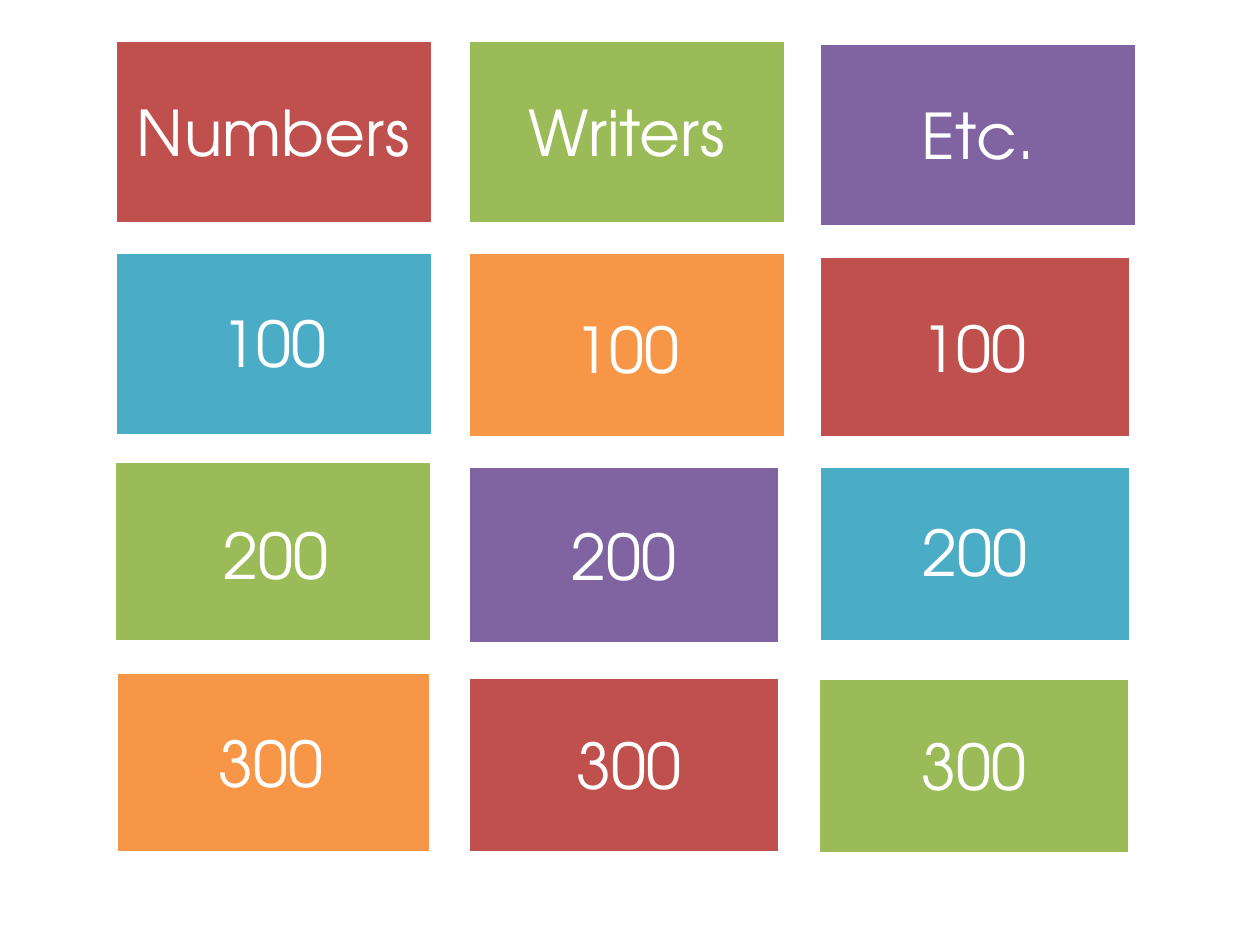
import pptx
import pptx.util
import pptx.dml.color
import pptx.enum.shapes
import pptx.enum.text
from dataclasses import dataclass
from typing import NamedTuple

Inches = pptx.util.Inches
RGB = pptx.dml.color.RGBColor
MSO_SHAPE = pptx.enum.shapes.MSO_SHAPE


@dataclass(frozen=True)
class Theme:
    red: str = "C0504D"
    green: str = "9BBB59"
    purple: str = "8064A2"
    teal: str = "4BACC6"
    orange: str = "F79646"
    white: str = "FFFFFF"
    font: str = "TeX Gyre Adventor"
    text_size: float = 36
    border: float = 2.5


class Box(NamedTuple):
    left: float
    top: float
    width: float
    height: float


class Tile(NamedTuple):
    text: str
    color: str
    box: Box
    label: Box


THEME = Theme()

HEADINGS = [
    Tile("Numbers", THEME.red, Box(0.91, 0.32, 2.53, 1.46), Box(0.93, 0.32, 2.48, 1.44)),
    Tile("Writers", THEME.green, Box(3.71, 0.32, 2.53, 1.46), Box(3.71, 0.32, 2.53, 1.44)),
    Tile("Etc.", THEME.purple, Box(6.5, 0.34, 2.53, 1.46), Box(6.5, 0.34, 2.53, 1.45)),
]
BUTTONS = [
    Tile("100", THEME.teal, Box(0.91, 2, 2.53, 1.46), Box(0.91, 1.99, 2.53, 1.45)),
    Tile("100", THEME.orange, Box(3.71, 2, 2.53, 1.48), Box(3.71, 2.04, 2.53, 1.45)),
    Tile("100", THEME.red, Box(6.5, 2.03, 2.48, 1.45), Box(6.49, 2.05, 2.48, 1.41)),
    Tile("200", THEME.green, Box(0.9, 3.66, 2.53, 1.44), Box(0.95, 3.69, 2.48, 1.41)),
    Tile("200", THEME.purple, Box(3.71, 3.7, 2.48, 1.41), Box(3.71, 3.7, 2.48, 1.41)),
    Tile("200", THEME.teal, Box(6.5, 3.7, 2.48, 1.4), Box(6.5, 3.67, 2.48, 1.41)),
    Tile("300", THEME.orange, Box(0.92, 5.33, 2.5, 1.44), Box(0.9, 5.33, 2.5, 1.44)),
    Tile("300", THEME.red, Box(3.71, 5.37, 2.48, 1.4), Box(3.75, 5.36, 2.48, 1.41)),
    Tile("300", THEME.green, Box(6.49, 5.38, 2.48, 1.4), Box(6.49, 5.37, 2.48, 1.41)),
]


def write_text(sp, text: str, *, font: str = THEME.font, size: float = THEME.text_size,
               color: str = THEME.white) -> None:
    tf = sp.text_frame
    tf.word_wrap = True
    tf.auto_size = pptx.enum.text.MSO_AUTO_SIZE.NONE
    tf.vertical_anchor = pptx.enum.text.MSO_ANCHOR.MIDDLE
    p = tf.paragraphs[0]
    p.alignment = pptx.enum.text.PP_ALIGN.CENTER
    r = p.add_run()
    r.text = text
    r.font.name = font
    r.font.size = pptx.util.Pt(size)
    r.font.color.rgb = RGB.from_string(color)


def draw_tile(s, tile: Tile, shape_type: MSO_SHAPE, title=None) -> None:
    """Draw the coloured tile and its label, using the title placeholder if given."""
    sp = s.shapes.add_shape(shape_type, *map(Inches, tile.box))
    sp.shadow.inherit = False
    sp.fill.solid()
    sp.fill.fore_color.rgb = RGB.from_string(tile.color)
    sp.line.color.rgb = RGB.from_string(THEME.white)
    sp.line.width = pptx.util.Pt(THEME.border)

    if title is None:
        label = s.shapes.add_textbox(*map(Inches, tile.label))
    else:
        label = title
        label.left, label.top, label.width, label.height = map(Inches, tile.label)
        sp.element.addnext(label.element)
    write_text(label, tile.text)


def main() -> None:
    prs = pptx.Presentation()
    prs.slide_width, prs.slide_height = Inches(10), Inches(7.5)
    s = prs.slides.add_slide(prs.slide_layouts.get_by_name("Title Only"))
    s.background.fill.solid()
    s.background.fill.fore_color.rgb = RGB.from_string(THEME.white)

    first, *others = HEADINGS
    draw_tile(s, first, MSO_SHAPE.RECTANGLE, title=s.shapes.title)
    for tile in others:
        draw_tile(s, tile, MSO_SHAPE.RECTANGLE)
    for tile in BUTTONS:
        draw_tile(s, tile, MSO_SHAPE.ACTION_BUTTON_CUSTOM)
    prs.save("out.pptx")


if __name__ == "__main__":
    main()
